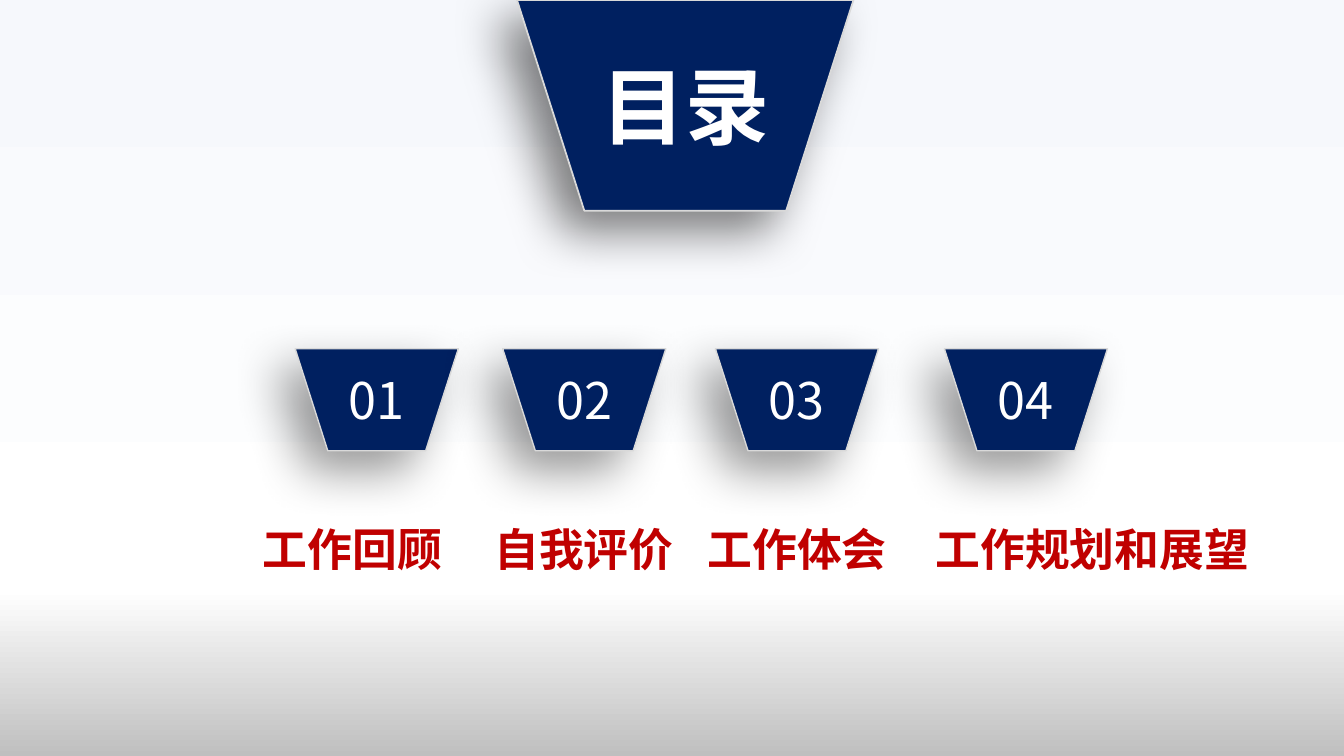
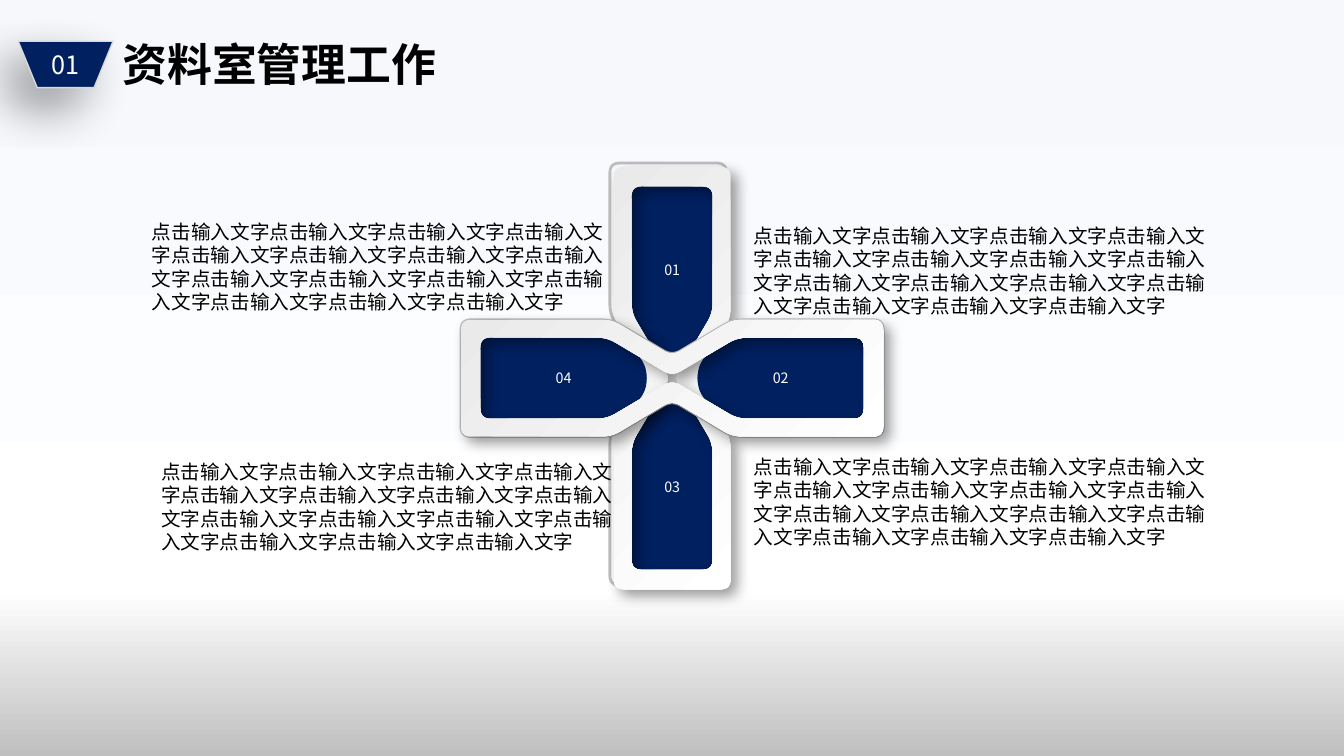
from copy import deepcopy
from dataclasses import dataclass
from math import hypot

from lxml.etree import SubElement
from pptx import Presentation
from pptx.dml.color import RGBColor
from pptx.enum.shapes import MSO_SHAPE
from pptx.enum.text import MSO_ANCHOR, PP_ALIGN
from pptx.oxml.ns import qn
from pptx.util import Cm, Pt


@dataclass(frozen=True)
class Theme:
    font: str = "Noto Sans CJK SC"
    navy: str = "002060"
    red: str = "C00000"
    white: str = "FFFFFF"
    black: str = "000000"
    edge: str = "D9D9D9"
    rim: str = "BFBFBF"
    ring: tuple = ((0, "EAEAEA"), (1, "FFFFFF"))
    background: tuple = ((0, "F6F8FC"), (0.78, "FFFFFF"), (1, "BFBFBF"))
    cover_size: float = 60
    number_size: float = 36
    heading_size: float = 32
    badge_size: float = 18
    body_size: float = 14
    petal_size: float = 10.2


THEME = Theme()
CENTRE = (16.94, 9.53)
CORNER = 0.25
CURVE_STEPS = 8
PETAL = [(4.83, -1.02), (4.83, 1.02), (1.57, 1.02), (0.87, 0.62),
         (0.64, 0.25), (0.64, -0.25), (0.87, -0.62), (1.57, -1.02)]
SECTIONS = [("01", "工作回顾", 7.44, 8.88), ("02", "自我评价", 12.67, 14.72),
            ("03", "工作体会", 18.03, 20.09), ("04", "工作规划和展望", 23.8, 27.53)]
BODY_PLACES = [(18.75, 5.51), (3.81, 11.46), (18.75, 11.33), (3.58, 5.41)]


def apply_format(target, values):
    for name, value in values.items():
        setattr(target, name, value)


def write_text(shape, text, size, color, bold=False, align=PP_ALIGN.CENTER,
               spacing=1.0, **frame_values):
    frame = shape.text_frame
    apply_format(frame, {"word_wrap": True, **frame_values})
    paragraph = frame.paragraphs[0]
    apply_format(paragraph, {"alignment": align, "line_spacing": spacing})
    run = paragraph.add_run()
    run.text = text
    apply_format(run.font, {"name": THEME.font, "size": Pt(size), "bold": bold})
    run.font.color.rgb = RGBColor.from_string(color)
    SubElement(run.font._element, qn("a:ea"), typeface=THEME.font)


def add_text(slide, box, text, size, color, **values):
    shape = slide.shapes.add_textbox(*map(Cm, box))
    write_text(shape, text, size, color, **values)


def fill_solid(shape, color):
    shape.fill.solid()
    shape.fill.fore_color.rgb = RGBColor.from_string(color)


def fill_gradient(fill, element, stops, angle):
    fill.gradient()
    fill.gradient_angle = angle
    stop_list = element.find(".//" + qn("a:gsLst"))
    while len(stop_list) < len(stops):
        stop_list.append(deepcopy(stop_list[0]))
    for stop, (position, color) in zip(fill.gradient_stops, stops):
        stop.position = position
        stop.color.rgb = RGBColor.from_string(color)


def set_line(shape, color, width):
    shape.line.color.rgb = RGBColor.from_string(color)
    shape.line.width = Pt(width)


def add_shadow(shape, opacity, blur, distance, angle):
    effects = shape.element.spPr.find(qn("a:effectLst"))
    shadow = SubElement(effects, qn("a:outerShdw"), blurRad=str(Pt(blur)),
                        dist=str(Pt(distance)), dir=str(angle * 60000),
                        algn="ctr", rotWithShape="0")
    color = SubElement(shadow, qn("a:srgbClr"), val=THEME.black)
    SubElement(color, qn("a:alpha"), val=str(opacity * 1000))


def add_badge(slide, box, text, size, bold=False, line_width=1, opacity=40):
    shape = slide.shapes.add_shape(MSO_SHAPE.FLOWCHART_MANUAL_OPERATION, *map(Cm, box))
    shape.shadow.inherit = False
    fill_solid(shape, THEME.navy)
    set_line(shape, THEME.edge, line_width)
    add_shadow(shape, opacity, 35, 20, 135)
    write_text(shape, text, size, THEME.white, bold, vertical_anchor=MSO_ANCHOR.MIDDLE)


def band_outline(length, height, neck_start, neck):
    upper = [(-length, -height), (-neck_start, -height), (0, -neck),
             (neck_start, -height), (length, -height)]
    return upper + [(x, -y) for x, y in reversed(upper)]


def turn(points, quarters):
    for _ in range(quarters):
        points = [(-y, x) for x, y in points]
    return points


def toward(point, target):
    share = CORNER / hypot(target[0] - point[0], target[1] - point[1])
    return tuple(a + (b - a) * min(share, 0.5) for a, b in zip(point, target))


def round_corners(points):
    rounded = []
    for index, point in enumerate(points):
        start = toward(point, points[index - 1])
        end = toward(point, points[(index + 1) % len(points)])
        for step in range(CURVE_STEPS + 1):
            t = step / CURVE_STEPS
            rounded.append(tuple((1 - t) ** 2 * a + 2 * t * (1 - t) * b + t ** 2 * c
                                 for a, b, c in zip(start, point, end)))
    return rounded


def add_outline(slide, contours, quarters, offset=0):
    builder = None
    for contour in contours:
        points = [(Cm(CENTRE[0] + offset + x), Cm(CENTRE[1] + offset + y))
                  for x, y in round_corners(turn(contour, quarters))]
        if builder is None:
            builder = slide.shapes.build_freeform(*points[0])
        else:
            builder.move_to(*points[0])
        builder.add_line_segments(points[1:], close=True)
    shape = builder.convert_to_shape()
    shape.shadow.inherit = False
    return shape


def add_petal(slide, text, quarters):
    shape = add_outline(slide, [PETAL], quarters)
    fill_solid(shape, THEME.navy)
    shape.line.fill.background()
    write_text(shape, text, THEME.petal_size, THEME.white,
               vertical_anchor=MSO_ANCHOR.MIDDLE)


def add_band(slide, quarters, rim_offset, petals):
    outer = band_outline(5.32, 1.47, 1.52, 0.56)
    inner = band_outline(4.83, 1.02, 1.64, 0.05)
    rim = add_outline(slide, [outer], quarters, rim_offset)
    rim.fill.background()
    set_line(rim, THEME.rim, 2)
    for text, petal_quarters in petals:
        add_petal(slide, text, petal_quarters)
    ring = add_outline(slide, [outer, inner[::-1]], quarters)
    fill_gradient(ring.fill, ring.element, THEME.ring, 315)
    ring.line.fill.background()
    add_shadow(ring, 40, 10, 6, 45)


def build_contents(slide):
    label_width = 9.6
    insets = {"margin_left": Cm(0.33), "margin_right": Cm(0.33),
              "margin_top": Cm(0.18), "margin_bottom": Cm(0.18)}
    for _, label, _, centre in SECTIONS:
        add_text(slide, (centre - label_width / 2, 12.28, label_width, 2.39), label,
                 THEME.heading_size, THEME.red, bold=True, spacing=1.5, **insets)
    add_badge(slide, (13.03, 0, 8.48, 5.31), "目录", THEME.cover_size,
              bold=True, line_width=1.25, opacity=50)
    for number, _, left, _ in SECTIONS:
        add_badge(slide, (left, 8.79, 4.11, 2.57), number, THEME.number_size)


def build_management(slide):
    add_text(slide, (2.84, 0.81, 10.67, 1.63), "资料室管理工作", THEME.heading_size,
             THEME.black, bold=True, align=PP_ALIGN.LEFT)
    add_badge(slide, (0.46, 1.04, 2.39, 1.17), "01", THEME.badge_size)
    add_band(slide, 1, -0.1, [("01", 3), ("03", 1)])
    add_band(slide, 0, 0, [("02", 0), ("04", 2)])
    for left, top in BODY_PLACES:
        add_text(slide, (left, top, 12.12, 2.64), "点击输入文字" * 15,
                 THEME.body_size, THEME.black, align=PP_ALIGN.LEFT)


def main():
    presentation = Presentation()
    apply_format(presentation, {"slide_width": Cm(33.87), "slide_height": Cm(19.05)})
    master = presentation.slide_master
    fill_gradient(master.background.fill, master.element, THEME.background, 270)
    for build in (build_contents, build_management):
        build(presentation.slides.add_slide(presentation.slide_layouts[6]))
    presentation.save("out.pptx")


if __name__ == "__main__":
    main()
